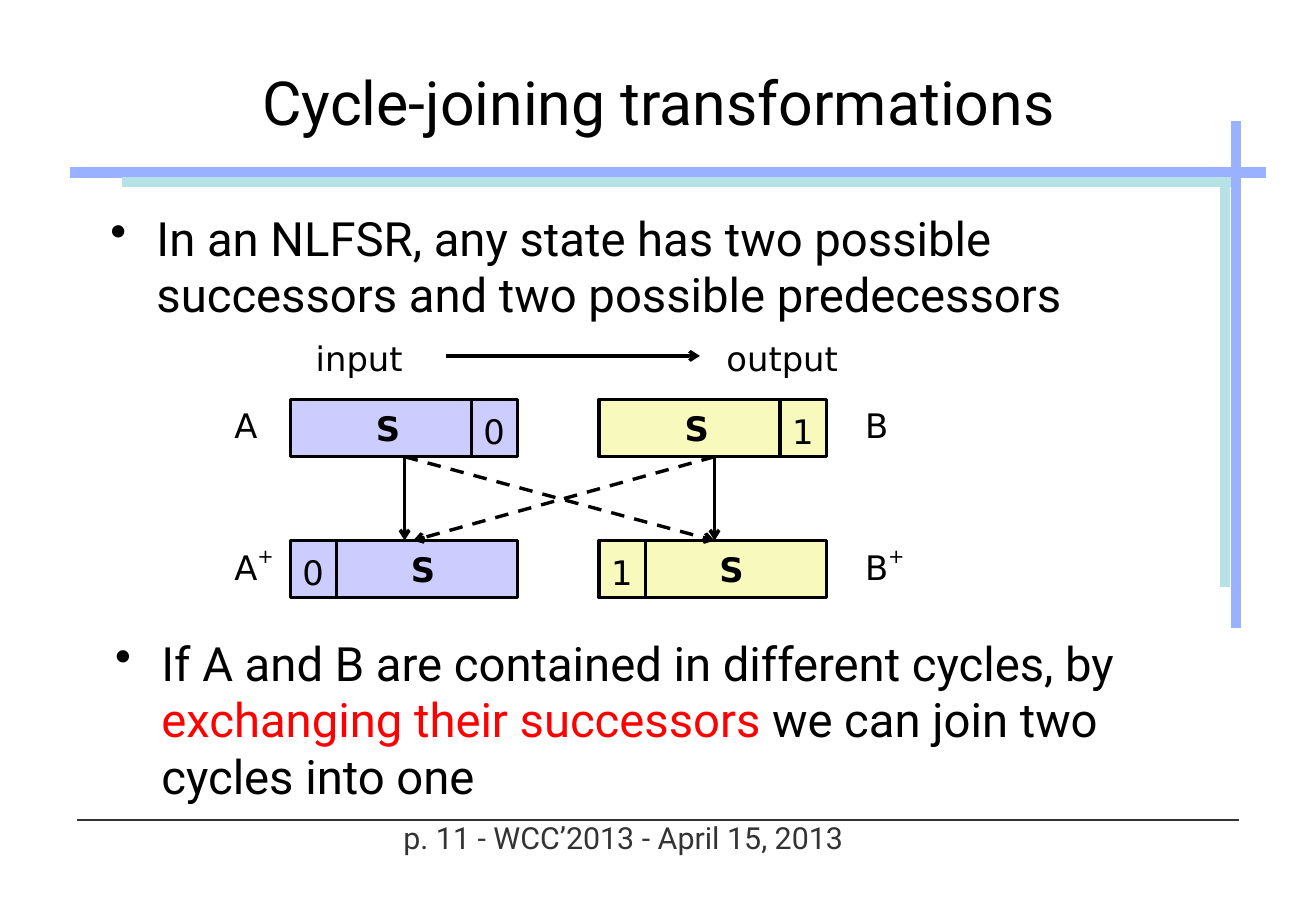
from lxml import etree
from pptx import Presentation
from pptx.dml.color import RGBColor
from pptx.enum import dml, shapes, text
from pptx.oxml import ns
from pptx.util import Inches, Pt

BLACK = RGBColor(0x00, 0x00, 0x00)
RED = RGBColor(0xFF, 0x00, 0x00)
GRAY = RGBColor(0x33, 0x33, 0x33)
BLUE = RGBColor(0x99, 0xB1, 0xFF)
TEAL = RGBColor(0xB5, 0xE1, 0xE7)
LAVENDER = RGBColor(0xCC, 0xCC, 0xFF)
YELLOW = RGBColor(0xF8, 0xF9, 0xBD)

TEXT_FONT = "Roboto"
DIAGRAM_FONT = "DejaVu Sans"


def style_run(run, font, size, color=BLACK, bold=False):
    run.font.name = font
    run.font.size = Pt(size)
    run.font.color.rgb = color
    run.font.bold = bold


def set_insets(frame, left, top, right, bottom):
    frame.margin_left, frame.margin_top = Inches(left), Inches(top)
    frame.margin_right, frame.margin_bottom = Inches(right), Inches(bottom)


def add_line(slide, start, end, color=BLACK, width=2, arrow=False, dashed=False):
    points = [Inches(value) for value in (*start, *end)]
    line = slide.shapes.add_connector(shapes.MSO_CONNECTOR.STRAIGHT, *points)
    line.line.color.rgb = color
    line.line.width = Pt(width)
    if dashed:
        line.line.dash_style = dml.MSO_LINE.DASH
    if arrow:
        etree.SubElement(line.line._get_or_add_ln(), ns.qn("a:tailEnd"), type="arrow")
    etree.SubElement(line._element.spPr, ns.qn("a:effectLst"))


def add_label(slide, left, top, width, height, wording, superscript=""):
    label = slide.shapes.add_textbox(*map(Inches, (left, top, width, height)))
    frame = label.text_frame
    frame.word_wrap = False
    frame.auto_size = text.MSO_AUTO_SIZE.SHAPE_TO_FIT_TEXT
    paragraph = frame.paragraphs[0]
    paragraph.text = wording
    if superscript:
        raised = paragraph.add_run()
        raised.text = superscript
        raised._r.get_or_add_rPr().set("baseline", "50000")
    for run in paragraph.runs:
        style_run(run, DIAGRAM_FONT, 20)
    return label


def add_footer(slide, left, top, width):
    add_line(slide, (left, top), (left + width, top), GRAY, 1.5)
    footer = add_label(slide, left + 2.56, top - 0.05, 3.88, 0.38,
                       "p. 11 - WCC’2013 - April 15, 2013")
    set_insets(footer.text_frame, 0.04, 0.04, 0.04, 0.04)
    paragraph = footer.text_frame.paragraphs[0]
    paragraph.alignment = text.PP_ALIGN.CENTER
    style_run(paragraph.runs[0], TEXT_FONT, 18, GRAY)


def add_frame(slide, left, top, width, height):
    """Crossing blue bars with a teal shade inside the corner."""
    bar_y, bar_x = top + 0.42, left + width - 0.25
    shade_y, shade_x = bar_y + 0.08, bar_x - 0.09
    add_line(slide, (left, bar_y), (left + width, bar_y), BLUE, 6)
    add_line(slide, (left + 0.42, shade_y), (bar_x, shade_y), TEAL, 6)
    add_line(slide, (shade_x, shade_y), (shade_x, top + height - 0.34), TEAL, 6)
    add_line(slide, (bar_x, top), (bar_x, top + height), BLUE, 6)


def add_title(slide, left, top, width, height):
    title = slide.shapes.title
    title.left, title.top = Inches(left), Inches(top)
    title.width, title.height = Inches(width), Inches(height)
    frame = title.text_frame
    frame.text = "Cycle-joining transformations"
    frame.vertical_anchor = text.MSO_ANCHOR.MIDDLE
    set_insets(frame, 0.08, 0.08, 0.08, 0.08)
    frame.paragraphs[0].alignment = text.PP_ALIGN.CENTER
    style_run(frame.paragraphs[0].runs[0], TEXT_FONT, 36)


def add_bullet(slide, left, top, width, height, parts):
    box = slide.shapes.add_textbox(*map(Inches, (left, top, width, height)))
    box.text_frame.word_wrap = True
    paragraph = box.text_frame.paragraphs[0]
    properties = paragraph._p.get_or_add_pPr()
    properties.set("marL", str(Inches(0.38)))
    properties.set("indent", str(-Inches(0.38)))
    etree.SubElement(properties, ns.qn("a:buChar"), char="•")
    for wording, color in parts:
        run = paragraph.add_run()
        run.text = wording
        style_run(run, TEXT_FONT, 28, color)


def add_register(slide, left, top, width, height, bit, fill, bit_first):
    """State S with one bit cell at its left or right end."""
    cell = 0.38
    register = slide.shapes.add_shape(shapes.MSO_SHAPE.RECTANGLE,
                                      *map(Inches, (left, top, width, height)))
    register.shadow.inherit = False
    register.fill.solid()
    register.fill.fore_color.rgb = fill
    register.line.color.rgb = BLACK
    register.line.width = Pt(2)
    frame = register.text_frame
    frame.text = "S"
    frame.word_wrap = False
    frame.vertical_anchor = text.MSO_ANCHOR.MIDDLE
    if bit_first:
        set_insets(frame, 0.41, 0.05, 0.1, 0.05)
    else:
        set_insets(frame, 0.1, 0.05, 0.36, 0.05)
    frame.paragraphs[0].alignment = text.PP_ALIGN.CENTER
    style_run(frame.paragraphs[0].runs[0], DIAGRAM_FONT, 20, bold=True)

    cell_left = left if bit_first else left + width - cell
    divider = left + cell if bit_first else cell_left
    add_line(slide, (divider, top), (divider, top + height))
    add_label(slide, cell_left, top + 0.04, cell, 0.41, bit)


def add_diagram(slide, left, top):
    # Direction of shifting
    add_label(slide, left + 0.67, top, 0.92, 0.41, "input")
    add_line(slide, (left + 1.84, top + 0.2), (left + 3.93, top + 0.2), arrow=True)
    add_label(slide, left + 4.05, top, 1.12, 0.41, "output")

    # States above, successors below
    width, height = 1.87, 0.47
    state_top, successor_top = top + 0.56, top + 1.72
    columns = [("A", "0", LAVENDER, left + 0.56, left),
               ("B", "1", YELLOW, left + 3.1, left + 5.19)]
    for name, bit, fill, register_left, name_left in columns:
        add_register(slide, register_left, state_top, width, height, bit, fill, False)
        add_register(slide, register_left, successor_top, width, height, bit, fill, True)
        add_label(slide, name_left, state_top - 0.01, 0.39, 0.41, name)
        add_label(slide, name_left, successor_top - 0.02, 0.55, 0.44, name, "+")

    # Present (solid) and exchanged (dashed) successors
    a_x, b_x = left + 1.5, left + 4.05
    start_y = state_top + height
    for start_x, end_x, dashed in [(a_x, a_x, False), (a_x, b_x, True),
                                   (b_x, b_x, False), (b_x, a_x + 0.07, True)]:
        add_line(slide, (start_x, start_y), (end_x, successor_top),
                 arrow=True, dashed=dashed)


def main():
    presentation = Presentation()
    presentation.slide_width, presentation.slide_height = Inches(10.83), Inches(7.5)
    slide = presentation.slides.add_slide(presentation.slide_layouts[5])
    add_footer(slide, 0.63, 6.75, 9.57)
    add_frame(slide, 0.58, 1, 9.84, 4.17)
    add_title(slide, 0.83, 0.33, 9.18, 1)
    add_bullet(slide, 0.81, 1.67, 9.1, 1.05, [
        ("In an NLFSR, any state has two possible successors "
         "and two possible predecessors", BLACK)])
    add_diagram(slide, 1.83, 2.73)
    add_bullet(slide, 0.85, 5.17, 9.23, 1.51, [
        ("If A and B are contained in different cycles, by ", BLACK),
        ("exchanging their successors ", RED),
        ("we can join two cycles into one", BLACK)])
    presentation.save("out.pptx")


if __name__ == "__main__":
    main()
